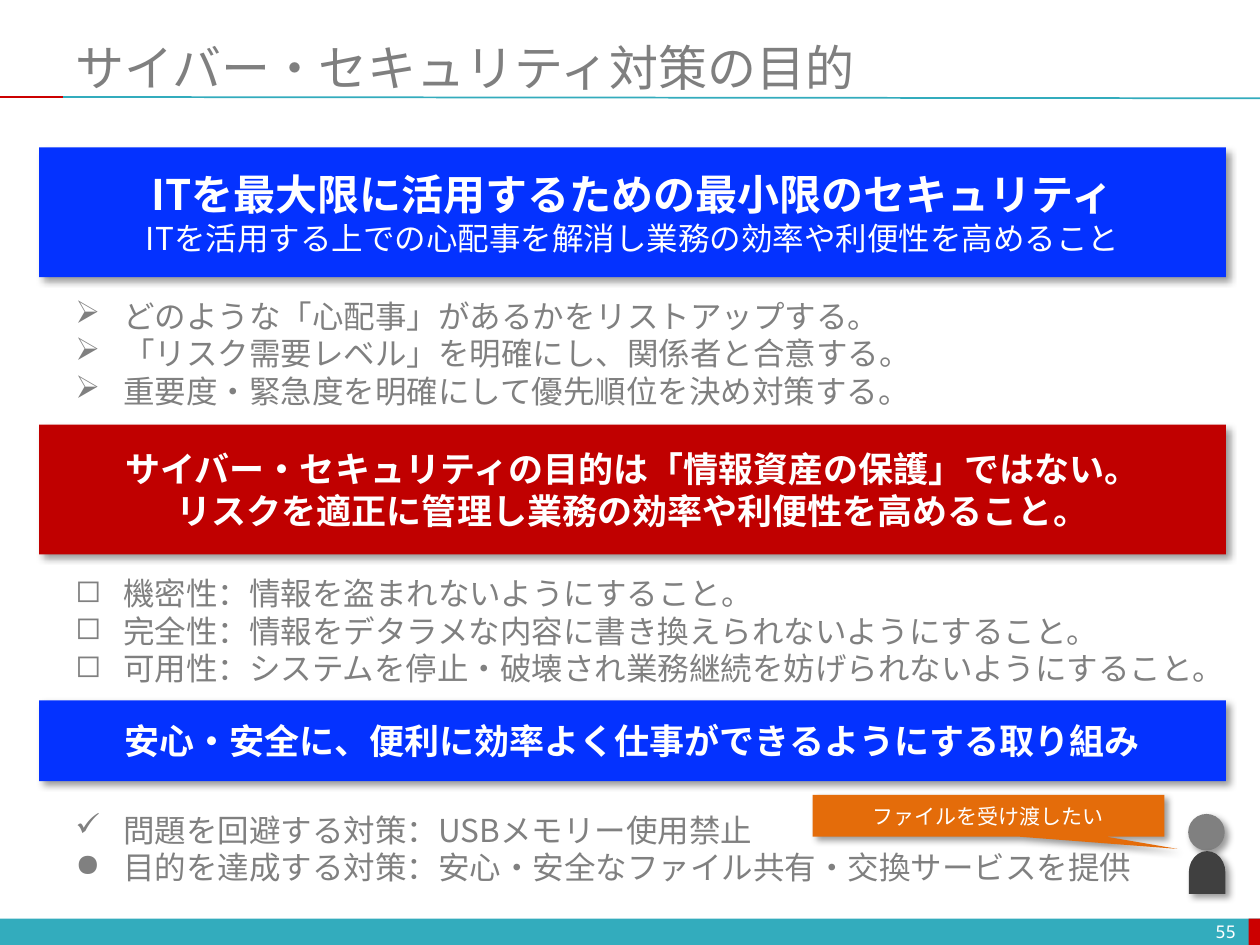
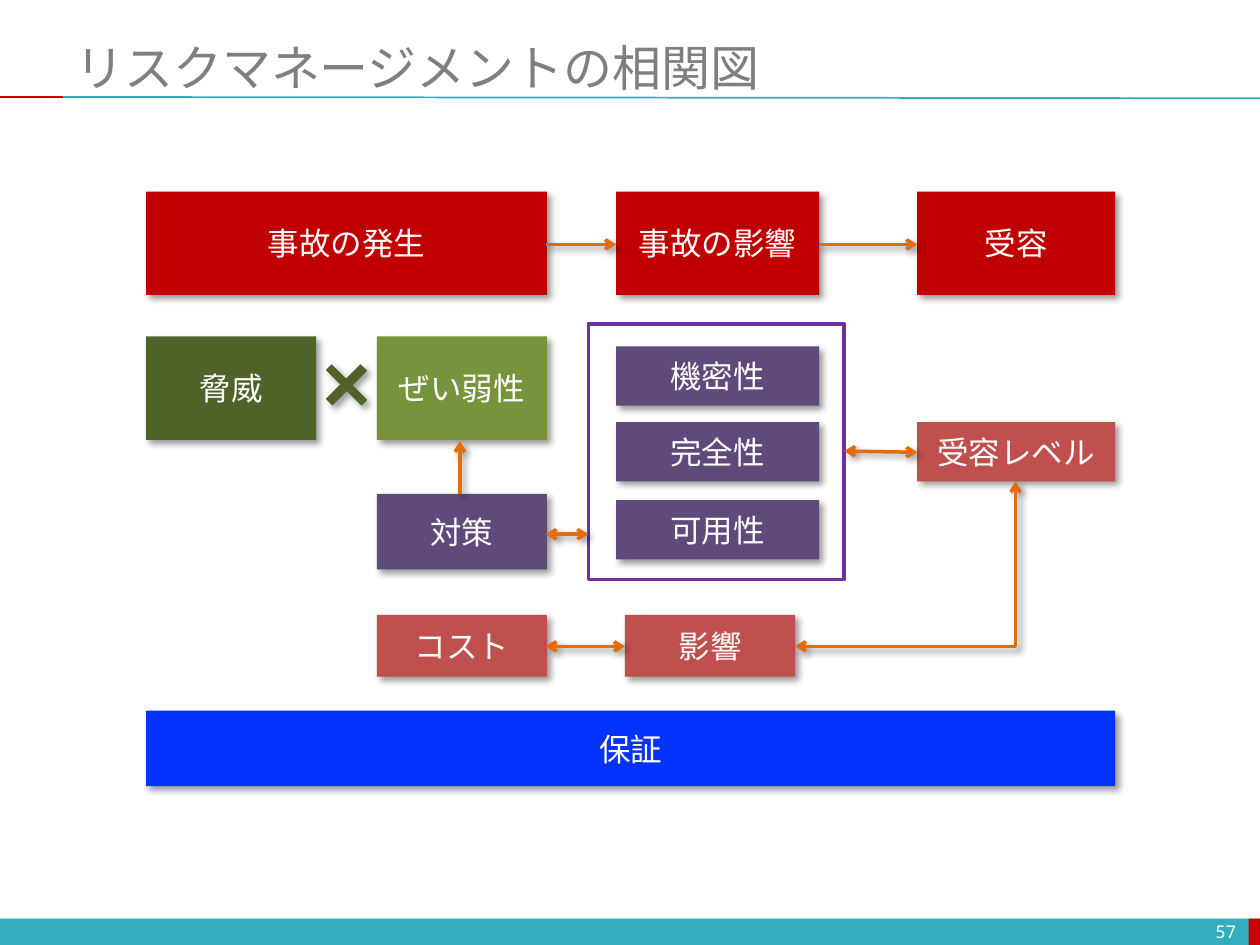
from lxml import etree
from pptx import Presentation
from pptx.dml.color import RGBColor
from pptx.enum.shapes import MSO_CONNECTOR, MSO_SHAPE
from pptx.enum.text import MSO_ANCHOR, PP_ALIGN
from pptx.oxml.ns import qn
from pptx.util import Inches, Pt

WHITE = RGBColor(0xFF, 0xFF, 0xFF)
TEAL = RGBColor(0x33, 0xAC, 0xBD)
ACCENT_RED = RGBColor(0xCC, 0x00, 0x00)
TITLE_GRAY = RGBColor(0x7F, 0x7F, 0x7F)
GRAY = RGBColor(0x80, 0x80, 0x80)
DARK_GRAY = RGBColor(0x40, 0x40, 0x40)
BLUE = RGBColor(0x04, 0x32, 0xFF)
RED = RGBColor(0xC0, 0x00, 0x00)
ORANGE = RGBColor(0xE4, 0x6C, 0x0A)
DARK_GREEN = RGBColor(0x4F, 0x62, 0x28)
GREEN = RGBColor(0x77, 0x93, 0x3C)
PURPLE = RGBColor(0x60, 0x4A, 0x7B)
VIOLET = RGBColor(0x70, 0x30, 0xA0)
CORAL = RGBColor(0xC0, 0x50, 0x4D)

BODY_FONT = "Noto Sans CJK JP"
TITLE_FONT = "Calibri"
NUMBER_FONT = "Noto Sans Mono"


def add_child(parent, tag, **attributes):
    return etree.SubElement(parent, qn(tag), attributes)


def set_effects(shape, shadow):
    properties = shape._element.spPr
    effects = properties.find(qn("a:effectLst"))
    if effects is None:
        effects = add_child(properties, "a:effectLst")
    if shadow:
        outer = add_child(effects, "a:outerShdw", blurRad=str(Pt(4)), dist=str(Pt(3)),
                          dir="2700000", algn="tl", rotWithShape="0")
        color = add_child(outer, "a:srgbClr", val="000000")
        add_child(color, "a:alpha", val="40000")


def style_paragraph(paragraph, size, color, name=BODY_FONT, bold=False):
    font = paragraph.font
    font.size, font.name, font.bold = Pt(size), name, bold
    font.color.rgb = color
    defaults = paragraph._p.pPr.find(qn("a:defRPr"))
    defaults.find(qn("a:latin")).addnext(
        defaults.makeelement(qn("a:ea"), {"typeface": name}))


def write_lines(frame, lines, color=WHITE, align=PP_ALIGN.CENTER, wrap=True):
    frame.word_wrap = wrap
    frame.vertical_anchor = MSO_ANCHOR.MIDDLE
    for index, (text, size, bold) in enumerate(lines):
        paragraph = frame.paragraphs[0] if index == 0 else frame.add_paragraph()
        paragraph.text = text
        paragraph.alignment = align
        if len(lines) > 1:
            paragraph.line_spacing = Pt(round(size * 1.2, 1))
        style_paragraph(paragraph, size, color, bold=bold)


def add_block(slide, kind, box, fill, lines=(), adjustments=(), shadow=True,
              rotation=0, wrap=True):
    block = slide.shapes.add_shape(kind, *map(Inches, box))
    block.shadow.inherit = False
    block.fill.solid()
    block.fill.fore_color.rgb = fill
    block.line.fill.background()
    block.rotation = rotation
    for index, value in enumerate(adjustments):
        block.adjustments[index] = value
    set_effects(block, shadow)
    if lines:
        write_lines(block.text_frame, lines, wrap=wrap)
    return block


def add_band(slide, top, height, fill, lines):
    add_block(slide, MSO_SHAPE.RECTANGLE, (0.31, top, 9.42, height), fill, lines, wrap=False)


def add_node(slide, text, box, fill):
    add_block(slide, MSO_SHAPE.ROUNDED_RECTANGLE, box, fill, [(text, 18, False)], [0])


def add_line(slide, start, end, color, width, kind=MSO_CONNECTOR.STRAIGHT, shadow=False):
    line = slide.shapes.add_connector(kind, *map(Inches, (*start, *end)))
    line.line.color.rgb = color
    line.line.width = Pt(width)
    set_effects(line, shadow)
    return line


def add_arrow(slide, start, end, both=False, kind=MSO_CONNECTOR.STRAIGHT):
    arrow = add_line(slide, start, end, ORANGE, 2, kind, shadow=True)
    outline = arrow.line._get_or_add_ln()
    if both:
        add_child(outline, "a:headEnd", type="arrow")
    add_child(outline, "a:tailEnd", type="arrow")
    if kind == MSO_CONNECTOR.ELBOW:
        arrow._element.spPr.find(qn("a:prstGeom")).set("prst", "bentConnector2")


def add_label(slide, text, box, size, color, name, align):
    frame = slide.shapes.add_textbox(*map(Inches, box)).text_frame
    write_lines(frame, [], wrap=True)
    paragraph = frame.paragraphs[0]
    paragraph.text = text
    paragraph.alignment = align
    style_paragraph(paragraph, size, color, name)


def add_bullets(slide, box, items):
    frame = slide.shapes.add_textbox(*map(Inches, box)).text_frame
    frame.word_wrap = False
    for index, (mark, text) in enumerate(items):
        paragraph = frame.paragraphs[0] if index == 0 else frame.add_paragraph()
        paragraph.text = text
        paragraph.line_spacing = Pt(21.4)
        properties = paragraph._p.get_or_add_pPr()
        properties.set("marL", str(Inches(0.38)))
        properties.set("indent", str(Inches(-0.38)))
        add_child(properties, "a:buChar", char=mark)
        style_paragraph(paragraph, 18, GRAY)


def add_framed_slide(deck, title, number):
    slide = deck.slides.add_slide(deck.slide_layouts[6])
    for left, width, color in ((0, 10, TEAL), (9.91, 0.09, ACCENT_RED)):
        add_block(slide, MSO_SHAPE.RECTANGLE, (left, 7.29, width, 0.21), color, shadow=False)
    add_line(slide, (0.5, 0.77), (10, 0.78), TEAL, 1)
    add_line(slide, (0, 0.77), (0.5, 0.77), ACCENT_RED, 1)
    add_label(slide, title, (0.5, 0.3, 9.5, 0.46), 28, TITLE_GRAY, TITLE_FONT, PP_ALIGN.LEFT)
    add_label(slide, number, (7.58, 7.27, 2.33, 0.24), 10, WHITE, NUMBER_FONT, PP_ALIGN.RIGHT)
    return slide


def build_purpose(deck):
    slide = add_framed_slide(deck, "サイバー・セキュリティ対策の目的", "55")
    add_bullets(slide, (0.5, 2.31, 6.89, 1.01), [
        ("➢", "どのような「心配事」があるかをリストアップする。"),
        ("➢", "「リスク需要レベル」を明確にし、関係者と合意する。"),
        ("➢", "重要度・緊急度を明確にして優先順位を決め対策する。"),
    ])
    add_band(slide, 1.17, 1.03, BLUE, [
        ("ITを最大限に活用するための最小限のセキュリティ", 24, True),
        ("ITを活用する上での心配事を解消し業務の効率や利便性を高めること", 18, False),
    ])
    add_band(slide, 3.37, 1.03, RED, [
        ("サイバー・セキュリティの目的は「情報資産の保護」ではない。", 20, True),
        ("リスクを適正に管理し業務の効率や利便性を高めること。", 20, True),
    ])
    add_bullets(slide, (0.5, 4.51, 9.42, 1.01), [
        ("◻", "機密性：情報を盗まれないようにすること。"),
        ("◻", "完全性：情報をデタラメな内容に書き換えられないようにすること。"),
        ("◻", "可用性：システムを停止・破壊され業務継続を妨げられないようにすること。"),
    ])
    add_band(slide, 5.56, 0.64, BLUE, [
        ("安心・安全に、便利に効率よく仕事ができるようにする取り組み", 20, True),
    ])
    add_bullets(slide, (0.5, 6.39, 8.91, 0.71), [
        ("✓", "問題を回避する対策：USBメモリー使用禁止"),
        ("●", "目的を達成する対策：安心・安全なファイル共有・交換サービスを提供"),
    ])
    add_block(slide, MSO_SHAPE.OVAL, (9.43, 6.46, 0.29, 0.29), GRAY)
    add_block(slide, MSO_SHAPE.FLOWCHART_DELAY, (9.41, 6.78, 0.34, 0.29), DARK_GRAY, rotation=270)
    add_block(slide, MSO_SHAPE.RECTANGULAR_CALLOUT, (6.45, 6.31, 2.79, 0.33), ORANGE,
              [("ファイルを受け渡したい", 12, False)], [0.537, 0.796])


def build_risk_map(deck):
    slide = add_framed_slide(deck, "リスクマネージメントの相関図", "57")
    triad = add_block(slide, MSO_SHAPE.ROUNDED_RECTANGLE, (4.67, 2.57, 2.03, 2.03), WHITE,
                      adjustments=[0], shadow=False)
    triad.line.color.rgb = VIOLET
    triad.line.width = Pt(2)

    threat_left, weakness_left, impact_left, accept_left = 1.16, 2.99, 4.89, 7.28
    cell, impact_width, accept_width = 1.35, 1.61, 1.57
    nodes = [
        ("事故の発生", (threat_left, 1.52, 3.18, 0.82), RED),
        ("事故の影響", (impact_left, 1.52, impact_width, 0.82), RED),
        ("受容", (accept_left, 1.52, accept_width, 0.82), RED),
        ("脅威", (threat_left, 2.67, cell, 0.82), DARK_GREEN),
        ("ぜい弱性", (weakness_left, 2.67, cell, 0.82), GREEN),
        ("機密性", (impact_left, 2.75, impact_width, 0.47), PURPLE),
        ("完全性", (impact_left, 3.35, impact_width, 0.47), PURPLE),
        ("可用性", (impact_left, 3.97, impact_width, 0.47), PURPLE),
        ("対策", (weakness_left, 3.92, cell, 0.6), PURPLE),
        ("受容レベル", (accept_left, 3.35, accept_width, 0.47), CORAL),
        ("保証", (threat_left, 5.64, 7.69, 0.6), BLUE),
        ("コスト", (weakness_left, 4.88, cell, 0.49), CORAL),
        ("影響", (4.96, 4.88, cell, 0.49), CORAL),
    ]
    for text, box, fill in nodes:
        add_node(slide, text, box, fill)
    add_block(slide, MSO_SHAPE.CROSS, (2.55, 2.86, 0.4, 0.39), DARK_GREEN,
              adjustments=[0.417], rotation=45)

    for start, end, both in [
        ((4.33, 1.94), (4.89, 1.94), False),
        ((6.5, 1.94), (7.28, 1.94), False),
        ((3.65, 3.92), (3.65, 3.5), False),
        ((4.33, 4.24), (4.67, 4.24), True),
        ((4.33, 5.13), (4.96, 5.13), True),
        ((6.7, 3.58), (7.28, 3.59), True),
    ]:
        add_arrow(slide, start, end, both)
    add_arrow(slide, (6.31, 5.13), (8.06, 3.82), True, MSO_CONNECTOR.ELBOW)


def main():
    deck = Presentation()
    deck.slide_width, deck.slide_height = Inches(10), Inches(7.5)
    build_purpose(deck)
    build_risk_map(deck)
    deck.save("out.pptx")


if __name__ == "__main__":
    main()
